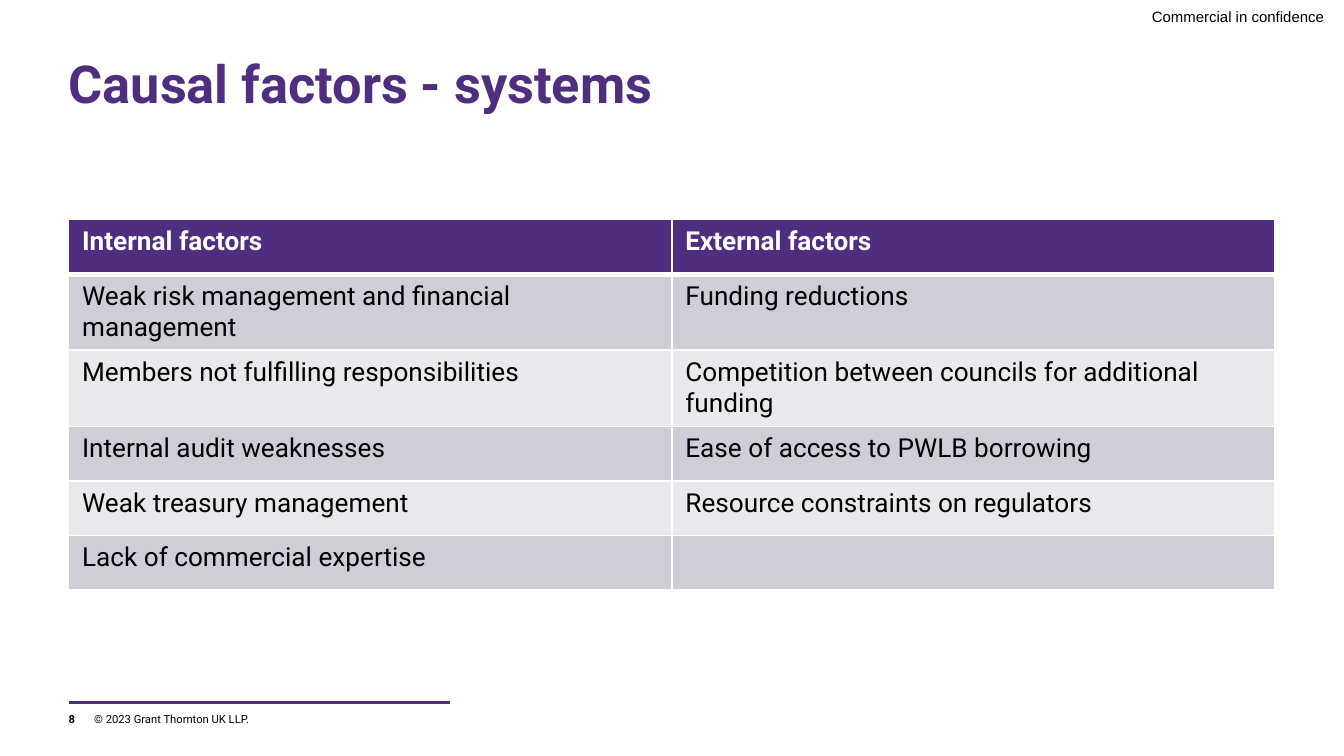
from lxml.etree import SubElement
from pptx import Presentation
from pptx.dml.color import RGBColor
from pptx.enum.shapes import MSO_CONNECTOR
from pptx.enum.text import MSO_ANCHOR, MSO_AUTO_SIZE, PP_ALIGN
from pptx.oxml import parse_xml
from pptx.oxml.ns import nsdecls, qn
from pptx.util import Pt

PURPLE = RGBColor(0x4F, 0x2D, 0x7F)
DARK = RGBColor(0xD0, 0xCD, 0xD8)
LIGHT = RGBColor(0xE9, 0xE8, 0xEC)
WHITE = RGBColor(0xFF, 0xFF, 0xFF)
BLACK = RGBColor(0, 0, 0)
LEFT, WIDE = 36.8, 646.4


def style(para, size, color, bold=False, face="Roboto"):
    font = para.font
    font.name, font.size, font.bold = face, Pt(size), bold
    font.color.rgb = color


def label(text, left, top, width, height, size, bold=False, face="Roboto"):
    box = slide.shapes.add_textbox(Pt(left), Pt(top), Pt(width), Pt(height))
    frame = box.text_frame
    frame.margin_left = frame.margin_right = 0
    frame.margin_top = frame.margin_bottom = 0
    frame.word_wrap = True
    frame.text = text
    style(frame.paragraphs[0], size, BLACK, bold, face)
    return frame


deck = Presentation()
deck.slide_width, deck.slide_height = Pt(720), Pt(405)
slide = deck.slides.add_slide(deck.slide_layouts[5])

# Title
title = slide.shapes.title
title.left, title.top = Pt(LEFT), Pt(31)
title.width, title.height = Pt(WIDE), Pt(62.6)
frame = title.text_frame
frame.margin_left = frame.margin_right = 0
frame.margin_top = frame.margin_bottom = 0
frame.vertical_anchor = MSO_ANCHOR.TOP
frame.auto_size = MSO_AUTO_SIZE.NONE
frame.text = "Causal factors - systems"
head = frame.paragraphs[0]
head.alignment = PP_ALIGN.LEFT
head.line_spacing = 0.9
style(head, 28, PURPLE, True)

# Confidentiality mark
mark = label("Commercial in confidence", 607.7, 0, 112.3, 17.3, 8, face="Arial")
mark.margin_right = Pt(10.5)
mark.vertical_anchor = MSO_ANCHOR.MIDDLE
mark.paragraphs[0].alignment = PP_ALIGN.RIGHT

# Table of factors
ROWS = [
    ("Internal factors", "External factors"),
    ("Weak risk management and financial management", "Funding reductions"),
    ("Members not fulfilling responsibilities",
     "Competition between councils for additional funding"),
    ("Internal audit weaknesses", "Ease of access to PWLB borrowing"),
    ("Weak treasury management", "Resource constraints on regulators"),
    ("Lack of commercial expertise", ""),
]
HIGH = 29.2
table = slide.shapes.add_table(len(ROWS), 2, Pt(LEFT), Pt(117.6),
                               Pt(WIDE), Pt(HIGH * len(ROWS))).table
for col in table.columns:
    col.width = Pt(WIDE / 2)
for i, texts in enumerate(ROWS):
    table.rows[i].height = Pt(HIGH)
    for j, text in enumerate(texts):
        cell = table.cell(i, j)
        cell.text = text
        style(cell.text_frame.paragraphs[0], 14, BLACK if i else WHITE, i == 0)
        cell.fill.solid()
        cell.fill.fore_color.rgb = (DARK if i % 2 else LIGHT) if i else PURPLE
        # White borders, thicker under the header
        props = cell._tc.get_or_add_tcPr()
        for k, side in enumerate("LRTB"):
            thick = (i, side) in ((0, "B"), (1, "T"))
            props.insert(k, parse_xml(
                f'<a:ln{side} {nsdecls("a")} w="{Pt(3 if thick else 1)}"><a:solidFill>'
                f'<a:srgbClr val="{WHITE}"/></a:solidFill></a:ln{side}>'))

# Footer
rule = slide.shapes.add_connector(MSO_CONNECTOR.STRAIGHT, Pt(LEFT), Pt(376.4),
                                  Pt(241), Pt(376.4))
rule.line.color.rgb = PURPLE
rule.line.width = Pt(1.5)
SubElement(rule._element.spPr, qn("a:effectLst"))
label("8", LEFT, 381.8, 13, 7.2, 6, bold=True)
label("© 2023 Grant Thornton UK LLP.", 50.5, 381.8, 310, 7.2, 6)

deck.save("out.pptx")
